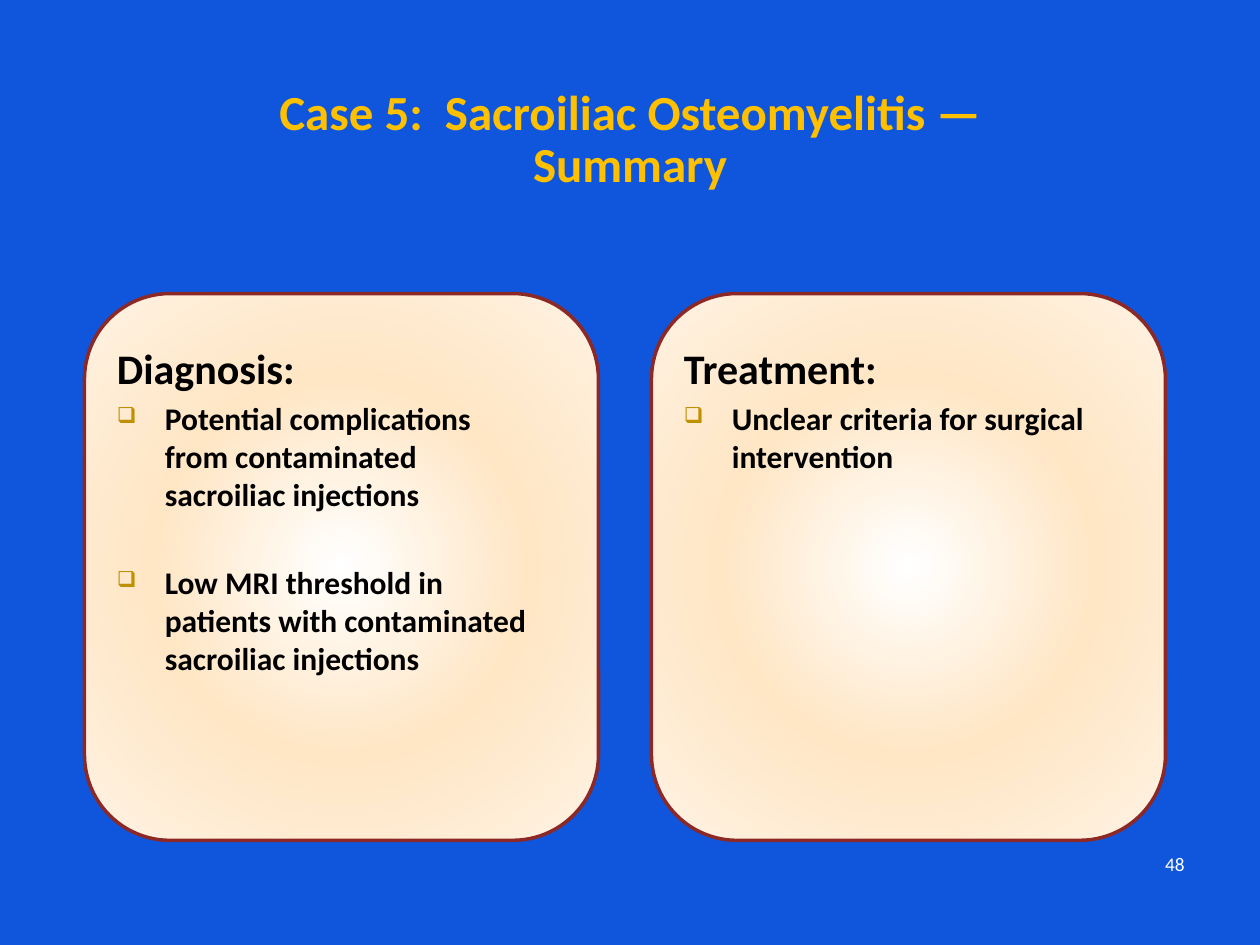
from dataclasses import dataclass

from lxml.etree import SubElement
from pptx import Presentation
from pptx.dml.color import RGBColor
from pptx.enum.shapes import MSO_SHAPE
from pptx.enum.text import MSO_ANCHOR, MSO_AUTO_SIZE, PP_ALIGN
from pptx.oxml.ns import qn
from pptx.util import Inches, Pt


@dataclass(frozen=True)
class Theme:
    font: str = "Calibri"
    back: str = "0F56DC"
    gold: str = "FFC000"
    mark: str = "BF9000"
    edge: str = "8C2825"
    ink: str = "000000"
    pale: str = "FFFFFF"
    glow: tuple = ((0, "FFFFFF"), (50, "FFE6C5"), (100, "FFF2E3"))
    title: int = 28
    head: int = 24
    body: int = 18
    note: int = 11


THEME = Theme()
# Panel left edge, heading, bullets; \v is a line break
PANELS = (
    (0.67, "Diagnosis:", (
        "Potential complications\vfrom contaminated\vsacroiliac injections",
        "Low MRI threshold in\vpatients with contaminated sacroiliac injections",
    )),
    (5.17, "Treatment:", ("Unclear criteria for surgical intervention",)),
)


def apply(item, values):
    for name, value in values.items():
        setattr(item, name, value)


def node(parent, tag, **values):
    return SubElement(parent, qn(f"a:{tag}"), {k: str(v) for k, v in values.items()})


def write(para, text, size, color, bold=True, **form):
    """Fill a paragraph and format its runs."""
    para.text = text
    apply(para, form)
    for run in para.runs:
        apply(run.font, {"name": THEME.font, "size": Pt(size), "bold": bold})
        run.font.color.rgb = RGBColor.from_string(color)


def add_mark(para):
    """Give a paragraph a hanging box bullet."""
    props = para._p.get_or_add_pPr()
    props.set("marL", str(Inches(0.38)))
    props.set("indent", str(Inches(-0.38)))
    node(node(props, "buClr"), "srgbClr", val=THEME.mark)
    node(props, "buSzPct", val=70000)
    node(props, "buChar", char="❑")


def add_glow(shape):
    """Fill a shape with a round gradient from its centre."""
    props = shape._element.spPr
    grad = node(props, "gradFill", rotWithShape=1)
    stops = node(grad, "gsLst")
    for pos, color in THEME.glow:
        node(node(stops, "gs", pos=pos * 1000), "srgbClr", val=color)
    round_path = node(grad, "path", path="circle")
    node(round_path, "fillToRect", l=50000, t=50000, r=50000, b=50000)
    props.find(qn("a:prstGeom")).addnext(grad)


def add_shade(run):
    """Put a soft shadow behind the letters of a run."""
    props = run.font._element
    effects = node(props, "effectLst")
    shade = node(effects, "outerShdw", blurRad=38100, dist=38100, dir=2700000)
    node(node(shade, "srgbClr", val=THEME.ink), "alpha", val=43000)
    props.find(qn("a:solidFill")).addnext(effects)


def add_text(slide, *place):
    frame = slide.shapes.add_textbox(*map(Inches, place)).text_frame
    frame.word_wrap = True
    return frame


def add_title(slide, text):
    title = slide.shapes.title
    apply(title, {"left": Inches(0.5), "top": Inches(0.33),
                  "width": Inches(9), "height": Inches(1.25)})
    frame = title.text_frame
    apply(frame, {"vertical_anchor": MSO_ANCHOR.BOTTOM, "word_wrap": True,
                  "auto_size": MSO_AUTO_SIZE.NONE})
    para = frame.paragraphs[0]
    write(para, text, THEME.title, THEME.gold,
          alignment=PP_ALIGN.CENTER, line_spacing=Pt(30))
    for run in para.runs:
        add_shade(run)


def add_panel(slide, left, head, points):
    # Rounded card
    card = slide.shapes.add_shape(
        MSO_SHAPE.ROUNDED_RECTANGLE, *map(Inches, (left, 2.33, 4.08, 4.34)))
    card.shadow.inherit = False
    add_glow(card)
    card.line.color.rgb = RGBColor.from_string(THEME.edge)
    card.line.width = Pt(2)
    # Heading and bullets
    frame = add_text(slide, left + 0.16, 2.67, 4.08, 4.17)
    write(frame.paragraphs[0], head, THEME.head, THEME.ink)
    for rank, point in enumerate(points):
        para = frame.add_paragraph()
        add_mark(para)
        write(para, point, THEME.body, THEME.ink,
              space_before=Pt(29 if rank else 3.6))


def add_number(slide, text):
    frame = add_text(slide, 0.5, 6.33, 9, 0.67)
    frame.vertical_anchor = MSO_ANCHOR.BOTTOM
    write(frame.paragraphs[0], text, THEME.note, THEME.pale, bold=False,
          alignment=PP_ALIGN.RIGHT, line_spacing=Pt(11))


def main():
    deck = Presentation()
    apply(deck, {"slide_width": Inches(10), "slide_height": Inches(7.5)})
    slide = deck.slides.add_slide(deck.slide_layouts[5])
    fill = slide.background.fill
    fill.solid()
    fill.fore_color.rgb = RGBColor.from_string(THEME.back)

    add_number(slide, "48")
    for panel in PANELS:
        add_panel(slide, *panel)
    add_title(slide, "Case 5:  Sacroiliac Osteomyelitis —\vSummary")
    deck.save("out.pptx")


if __name__ == "__main__":
    main()
